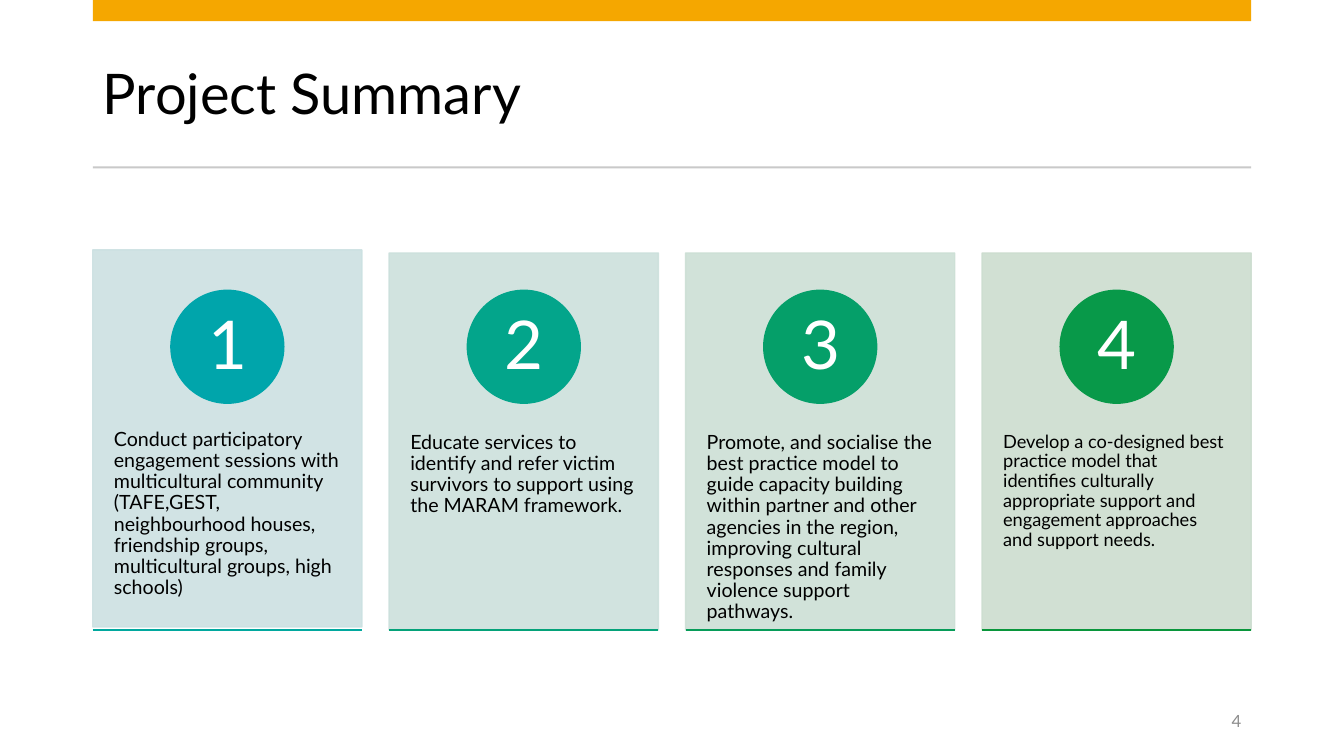
from lxml import etree
from pptx import Presentation
from pptx.dml.color import RGBColor
from pptx.enum.shapes import MSO_CONNECTOR, MSO_SHAPE
from pptx.enum.text import MSO_ANCHOR, MSO_AUTO_SIZE, PP_ALIGN
from pptx.oxml.ns import qn
from pptx.util import Inches, Pt

RECT, OVAL = MSO_SHAPE.RECTANGLE, MSO_SHAPE.OVAL
STRAIGHT = MSO_CONNECTOR.STRAIGHT
TOP, MIDDLE = MSO_ANCHOR.TOP, MSO_ANCHOR.MIDDLE
LEFT, CENTER, RIGHT = PP_ALIGN.LEFT, PP_ALIGN.CENTER, PP_ALIGN.RIGHT
NO_AUTOFIT = MSO_AUTO_SIZE.NONE

BLACK = RGBColor(0x00, 0x00, 0x00)
WHITE = RGBColor(0xFF, 0xFF, 0xFF)
GREY = RGBColor(0x8C, 0x8C, 0x8C)
RULE_GREY = RGBColor(0xC9, 0xC9, 0xC9)
AMBER = RGBColor(0xF5, 0xA7, 0x00)

MARGIN, CONTENT_W = 0.92, 11.49
CARD_W, CARD_H = 2.67, 3.74
CARD_BOTTOM = 6.25
DISC = 1.12

CARDS = [
    ("Conduct participatory engagement sessions with multicultural community "
     "(TAFE,GEST, neighbourhood houses, friendship groups, multicultural groups, high schools)",
     14, 2.48, RGBColor(0xCC, 0xE1, 0xE2), RGBColor(0x00, 0xA5, 0xAB), RGBColor(0x01, 0xA8, 0x9E)),
    ("Educate services to identify and refer victim survivors to support using "
     "the MARAM framework.",
     14, 2.51, RGBColor(0xCC, 0xE0, 0xDC), RGBColor(0x03, 0xA5, 0x8B), RGBColor(0x04, 0xA2, 0x79)),
    ("Promote, and socialise the best practice model to guide capacity building "
     "within partner and other agencies in the region, improving cultural responses "
     "and family violence support pathways.",
     14, 2.51, RGBColor(0xCC, 0xDF, 0xD5), RGBColor(0x05, 0x9F, 0x69), RGBColor(0x07, 0x9C, 0x59)),
    ("Develop a co-designed best practice model that identifies culturally "
     "appropriate support and engagement approaches and support needs.",
     13, 2.51, RGBColor(0xCC, 0xDD, 0xCF), RGBColor(0x08, 0x99, 0x49), RGBColor(0x09, 0x96, 0x3B)),
]


class Deck:
    """Holds the font and the current slide, and adds styled elements to it."""

    def __init__(self, s, font="Lato"):
        self.s = s
        self.font = font

    def set_text(self, sp, text, size, color, align=LEFT, anchor=MIDDLE,
                 inset=(0.1, 0.05), spacing=0.9):
        tf = sp.text_frame
        tf.word_wrap = True
        tf.auto_size = NO_AUTOFIT
        tf.vertical_anchor = anchor
        tf.margin_left = tf.margin_right = Inches(inset[0])
        tf.margin_top = tf.margin_bottom = Inches(inset[1])
        p = tf.paragraphs[0]
        p.text = text
        p.alignment = align
        p.line_spacing = spacing
        p.font.name = self.font
        p.font.size = Pt(size)
        p.font.color.rgb = color

    def title(self, text, x, y, w, h):
        sp = self.s.shapes.title
        sp.left, sp.top, sp.width, sp.height = map(Inches, (x, y, w, h))
        self.set_text(sp, text, 40, BLACK)

    def text(self, text, x, y, w, h, size, color, **style):
        sp = self.s.shapes.add_textbox(*map(Inches, (x, y, w, h)))
        self.set_text(sp, text, size, color, **style)

    def shape(self, kind, x, y, w, h, color, outlined=False, opacity=100):
        sp = self.s.shapes.add_shape(kind, *map(Inches, (x, y, w, h)))
        sp.shadow.inherit = False
        sp.fill.solid()
        sp.fill.fore_color.rgb = color
        if outlined:
            sp.line.color.rgb = color
            sp.line.width = Pt(1)
        else:
            sp.line.fill.background()
        if opacity < 100:
            for clr in sp._element.spPr.iter(qn("a:srgbClr")):
                etree.SubElement(clr, qn("a:alpha"), val=str(opacity * 1000))

    def line(self, x, y, w, color):
        cxn = self.s.shapes.add_connector(STRAIGHT, *map(Inches, (x, y, x + w, y)))
        cxn.line.color.rgb = color
        cxn.line.width = Pt(1)
        etree.SubElement(cxn._element.spPr, qn("a:effectLst"))

    def card(self, number, x, text, size, top, tint, disc_color, base_color):
        self.shape(RECT, x, top, CARD_W, CARD_H, tint, outlined=True, opacity=90)
        self.text(text, x, top + 1.42, CARD_W, 2.24, size, BLACK,
                  anchor=TOP, inset=(0.21, 0.36))
        disc_x = x + (CARD_W - DISC) / 2
        self.shape(OVAL, disc_x, 2.88, DISC, DISC, disc_color, outlined=True)
        self.text(str(number), disc_x + 0.17, 3.05, 0.79, 0.79, 48, WHITE,
                  align=CENTER, inset=(0.09, 0.01))
        self.line(x, CARD_BOTTOM, CARD_W, base_color)


def main():
    prs = Presentation()
    prs.slide_width, prs.slide_height = Inches(13.33), Inches(7.5)
    deck = Deck(prs.slides.add_slide(prs.slide_layouts[5]))
    deck.title("Project Summary", MARGIN, 0.37, CONTENT_W, 1.18)
    deck.shape(RECT, MARGIN, 0, CONTENT_W, 0.21, AMBER)
    deck.shape(RECT, MARGIN, 1.65, CONTENT_W, 0.02, RULE_GREY)
    deck.text("4", 9.53, 6.95, 2.88, 0.4, 12, GREY, align=RIGHT, spacing=1.0)
    pitch = (CONTENT_W - CARD_W) / (len(CARDS) - 1)
    for i, card in enumerate(CARDS):
        deck.card(i + 1, MARGIN + i * pitch, *card)
    prs.save("out.pptx")


if __name__ == "__main__":
    main()
